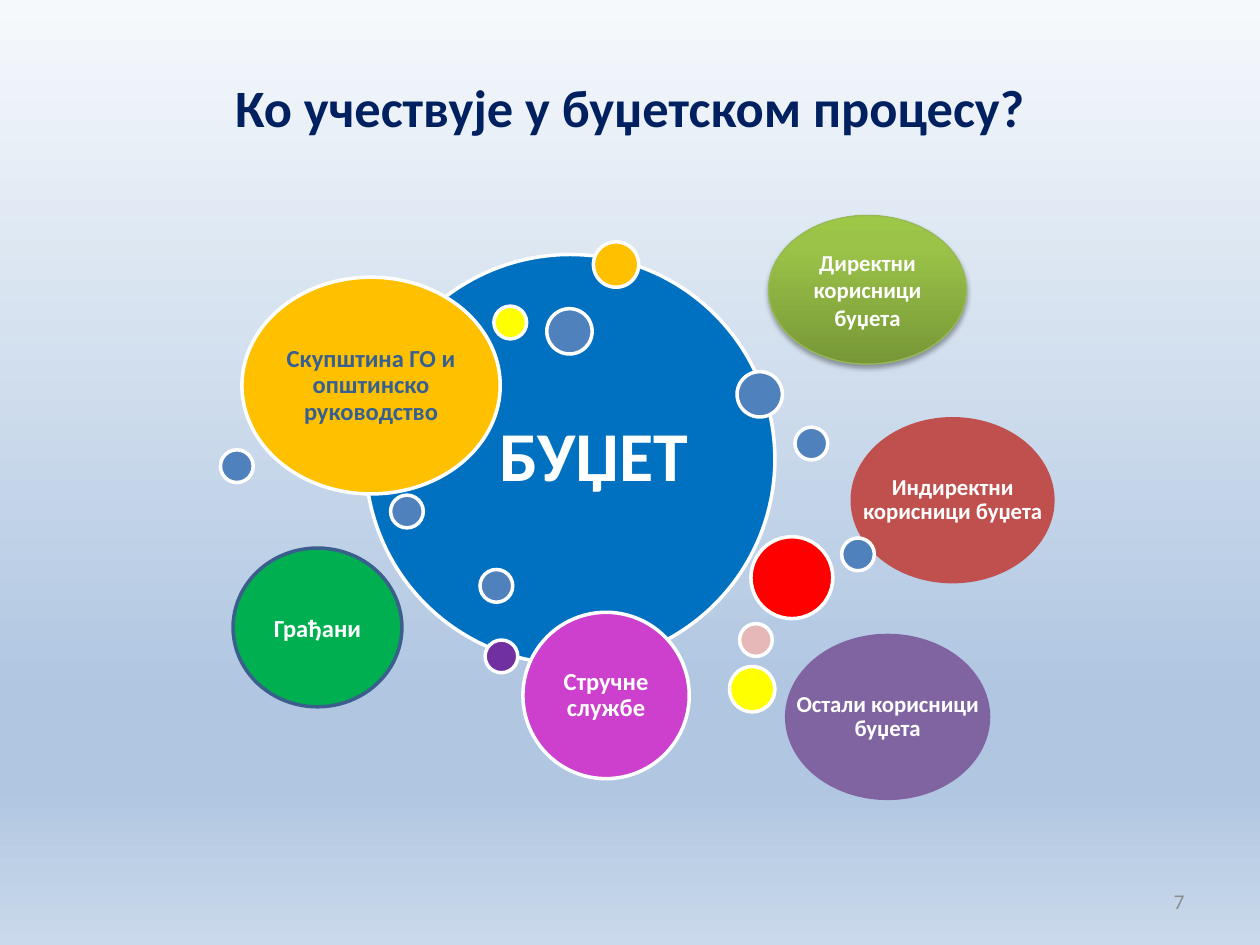
from dataclasses import dataclass
from typing import Optional

import lxml.etree
import pptx
import pptx.dml.color
import pptx.enum.shapes
import pptx.enum.text
import pptx.oxml.ns
import pptx.util

COLORS = {
    "navy": "002060", "grey": "8C8C8C", "white": "FFFFFF", "blue": "0070C0",
    "steel": "4F81BD", "slate": "376092", "edge": "3A5F8C", "amber": "FFC000",
    "yellow": "FFFF00", "red": "FF0000", "rose": "E6B9B8", "violet": "7030A0",
    "purple": "8064A2", "brick": "C0504D", "magenta": "CD3FCD",
    "green": "00B050", "lime": "9BC348", "lime edge": "98B955",
}
SKY = [(0, "F6F9FC"), (74, "B0C6E1"), (83, "B0C6E1"), (100, "CAD9EB")]
LIME = [(0, "779737"), (80, "9BC348"), (100, "9DC746")]
FONT = "Calibri"
COLUMNS, ROWS = 100, 75
CELL = 0.1  # inches, side of a square grid cell
SMALL, MEDIUM, LARGE = 2.6, 3.6, 6.5
ALIGN = pptx.enum.text.PP_ALIGN


@dataclass
class Disc:
    """A labelled ellipse; its label spans the full box when spread is set."""
    text: str
    column: float
    row: float
    width: float
    height: float
    fill: str
    line: Optional[str] = "white"
    size: float = 14
    color: str = "white"
    inset: float = 0.05
    shift: float = 0
    spread: bool = True


@dataclass
class Dot:
    column: float
    row: float
    diameter: float
    fill: str = "steel"


DISCS = [
    Disc("БУЏЕТ", 29, 20.2, 32.5, 32.5, "blue", size=40, inset=0.17, shift=0.37),
    Disc("Скупштина ГО и oпштинско руководство", 19.2, 22, 20.5, 17.2, "amber",
         color="slate"),
    Disc("Остали корисници буџета", 62.3, 50.3, 16.3, 13.2, "purple", None, 13),
    Disc("Индиректни корисници буџета", 67.5, 33.1, 16.2, 13.2, "brick", None, 13),
    Disc("Стручне службе", 41.5, 48.6, 13.2, 13.2, "magenta"),
    Disc("Грађани", 18.5, 43.5, 13.4, 12.6, "green", "edge", inset=0.1, spread=False),
]
DIRECT_USERS = Disc("Директни корисници буџета", 61, 17.1, 15.7, 11.8, "lime",
                    "lime edge", 13, inset=0.1, spread=False)
DOTS = [
    Dot(47.1, 19.2, MEDIUM, "amber"), Dot(38.5, 50.8, SMALL, "violet"),
    Dot(63.1, 33.9, SMALL), Dot(57.9, 52.9, MEDIUM, "yellow"),
    Dot(39.2, 24.3, SMALL, "yellow"), Dot(31, 39.3, SMALL),
    Dot(43.4, 24.5, MEDIUM), Dot(59.6, 42.6, LARGE, "red"),
    Dot(58.5, 29.5, MEDIUM), Dot(17.5, 35.7, SMALL), Dot(38.1, 45.2, SMALL),
    Dot(66.8, 42.7, SMALL), Dot(58.7, 49.5, SMALL, "rose"),
]


def cells(count: float) -> int:
    return pptx.util.Inches(count * CELL)


def rgb(name: str) -> pptx.dml.color.RGBColor:
    return pptx.dml.color.RGBColor.from_string(COLORS[name])


def add_node(parent, tag: str, **attributes):
    return lxml.etree.SubElement(parent, pptx.oxml.ns.qn(tag), attributes)


def set_gradient(fill, element, stops: list, angle: float) -> None:
    """Fill with the stops; the angle runs counter-clockwise."""
    fill.gradient()
    fill.gradient_angle = angle
    stop_list = next(element.iter(pptx.oxml.ns.qn("a:gsLst")))
    for stop in list(stop_list):
        stop_list.remove(stop)
    for percent, color in stops:
        stop = add_node(stop_list, "a:gs", pos=str(percent * 1000))
        add_node(stop, "a:srgbClr", val=color)


def write_text(shape, text: str, *, size: float, color: str, bold: bool = True,
               align=ALIGN.CENTER, spacing: float = 1, inset: float = 0.1,
               shift: float = 0) -> None:
    frame = shape.text_frame
    frame.word_wrap = True
    frame.auto_size = pptx.enum.text.MSO_AUTO_SIZE.NONE
    frame.vertical_anchor = pptx.enum.text.MSO_ANCHOR.MIDDLE
    frame.margin_left = pptx.util.Inches(inset + shift)
    frame.margin_right = pptx.util.Inches(inset)
    frame.margin_top = frame.margin_bottom = pptx.util.Inches(min(inset, 0.05))
    para = frame.paragraphs[0]
    para.alignment = align
    para.line_spacing = spacing
    span = para.add_run()
    span.text = text
    span.font.name = FONT
    span.font.size = pptx.util.Pt(size)
    span.font.bold = bold
    span.font.color.rgb = rgb(color)


def add_ellipse(page, column: float, row: float, width: float, height: float,
                fill: str, line: Optional[str] = "white"):
    shape = page.shapes.add_shape(
        pptx.enum.shapes.MSO_SHAPE.OVAL,
        cells(column), cells(row), cells(width), cells(height))
    shape.shadow.inherit = False
    shape.fill.solid()
    shape.fill.fore_color.rgb = rgb(fill)
    if line:
        shape.line.color.rgb = rgb(line)
        shape.line.width = pptx.util.Pt(2)
    else:
        shape.line.fill.background()
    return shape


def add_disc(page, disc: Disc):
    shape = add_ellipse(page, disc.column, disc.row, disc.width, disc.height,
                        disc.fill, disc.line)
    holder = shape
    if disc.spread:
        holder = page.shapes.add_textbox(shape.left, shape.top,
                                         shape.width, shape.height)
    write_text(holder, disc.text, size=disc.size, color=disc.color,
               spacing=0.9 if disc.spread else 1,
               inset=disc.inset, shift=disc.shift)
    return shape


def add_soft_shadow(shape) -> None:
    effects = next(shape.element.iter(pptx.oxml.ns.qn("a:effectLst")))
    shadow = add_node(effects, "a:outerShdw", blurRad=str(pptx.util.Pt(3.1)),
                      dist=str(pptx.util.Pt(1.8)), dir="5400000", rotWithShape="0")
    color = add_node(shadow, "a:srgbClr", val="000000")
    add_node(color, "a:alpha", val="35000")


def main() -> None:
    deck = pptx.Presentation()
    deck.slide_width, deck.slide_height = cells(COLUMNS), cells(ROWS)
    page = deck.slides.add_slide(deck.slide_layouts.get_by_name("Title Only"))
    set_gradient(page.background.fill, page.element, SKY, 270)

    title = page.shapes.title
    title.left, title.top = cells(5), cells(2.2)
    title.width, title.height = cells(90), cells(12.5)
    write_text(title, "Ко учествује у буџетском процесу?", size=30, color="navy")

    number = page.shapes.add_textbox(cells(71.7), cells(69.5), cells(23.3), cells(4))
    write_text(number, "7", size=12, color="grey", bold=False, align=ALIGN.RIGHT)

    for disc in DISCS:
        add_disc(page, disc)
    for dot in DOTS:
        add_ellipse(page, dot.column, dot.row, dot.diameter, dot.diameter, dot.fill)

    direct = add_disc(page, DIRECT_USERS)
    set_gradient(direct.fill, direct.element, LIME, 90)
    direct.line.width = pptx.util.Pt(0.75)
    add_soft_shadow(direct)
    deck.save("out.pptx")


if __name__ == "__main__":
    main()
